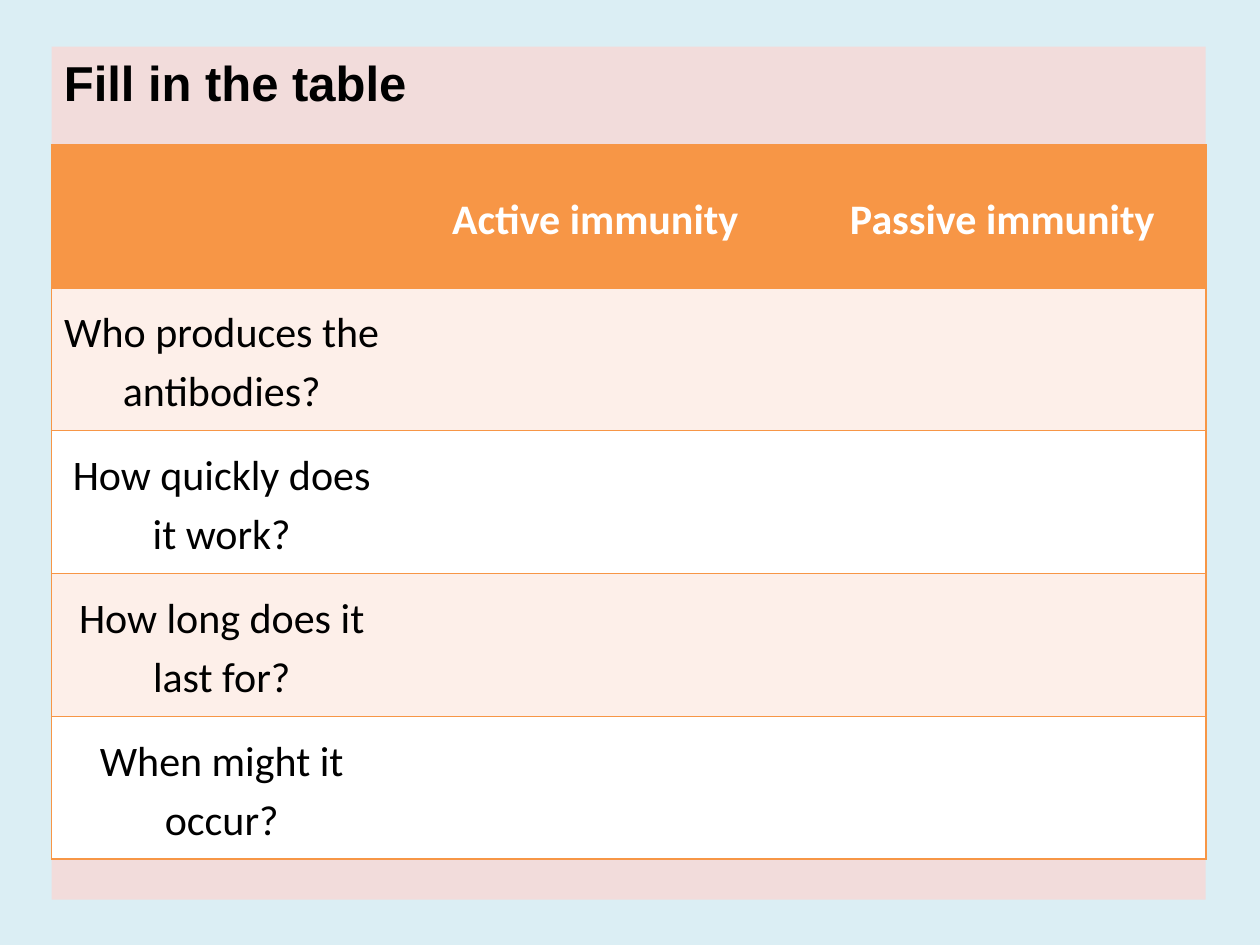
from lxml import etree
from pptx import Presentation
from pptx.dml.color import RGBColor
from pptx.enum.shapes import MSO_SHAPE
from pptx.enum.text import MSO_ANCHOR, MSO_AUTO_SIZE, PP_ALIGN
from pptx.oxml.ns import qn
from pptx.util import Inches, Pt

PALE_BLUE = RGBColor(0xDB, 0xEE, 0xF4)
PINK = RGBColor(0xF2, 0xDC, 0xDB)
ORANGE = RGBColor(0xF7, 0x96, 0x46)
PEACH = RGBColor(0xFD, 0xEF, 0xE9)
WHITE = RGBColor(0xFF, 0xFF, 0xFF)
BLACK = RGBColor(0x00, 0x00, 0x00)

HEADINGS = ["", "Active immunity", "Passive immunity"]
QUESTIONS = [
    "Who produces the antibodies?",
    "How quickly does it work?",
    "How long does it last for?",
    "When might it occur?",
]
COLUMN_WIDTHS = [2.7, 3.23, 3.23]


def add_run(paragraph, text, **font_format):
    run = paragraph.add_run()
    run.text = text
    color = font_format.pop("color")
    for name, value in font_format.items():
        setattr(run.font, name, value)
    run.font.color.rgb = color


def add_panel(slide, left, top, width, height):
    panel = slide.shapes.add_shape(MSO_SHAPE.RECTANGLE, left, top, width, height)
    panel.shadow.inherit = False
    panel.fill.solid()
    panel.fill.fore_color.rgb = PINK
    panel.line.fill.background()
    frame = panel.text_frame
    frame.word_wrap = True
    frame.auto_size = MSO_AUTO_SIZE.SHAPE_TO_FIT_TEXT
    frame.vertical_anchor = MSO_ANCHOR.TOP
    title = frame.paragraphs[0]
    title.alignment = PP_ALIGN.LEFT
    title.space_after = Pt(6)
    add_run(title, "Fill in the table", name="Arial", size=Pt(28), bold=True, color=BLACK)


def set_borders(cell, visible_sides):
    """Draw orange lines on the visible sides (of L, R, T, B) and none elsewhere."""
    properties = cell._tc.get_or_add_tcPr()
    for side in "LRTB":
        line = etree.SubElement(properties, qn(f"a:ln{side}"), w=str(Pt(1)))
        if side in visible_sides:
            fill = etree.SubElement(line, qn("a:solidFill"))
            etree.SubElement(fill, qn("a:srgbClr"), val=str(ORANGE))
        else:
            etree.SubElement(line, qn("a:noFill"))


def fill_cell(cell, text, is_heading):
    cell_format = {
        "vertical_anchor": MSO_ANCHOR.MIDDLE,
        "margin_left": Inches(0.07),
        "margin_right": Inches(0.07),
        "margin_top": 0,
        "margin_bottom": 0,
    }
    for name, value in cell_format.items():
        setattr(cell, name, value)
    paragraph = cell.text_frame.paragraphs[0]
    paragraph.alignment = PP_ALIGN.CENTER
    paragraph.line_spacing = 1.15
    paragraph.space_after = Pt(10 if is_heading else 0)
    add_run(paragraph, text, name="Calibri", size=Pt(24), bold=is_heading,
            color=WHITE if is_heading else BLACK)


def add_immunity_table(slide, left, top, width, height):
    rows = [HEADINGS] + [[question, "", ""] for question in QUESTIONS]
    table = slide.shapes.add_table(
        len(rows), len(HEADINGS), left, top, width, height).table
    for column, column_width in zip(table.columns, COLUMN_WIDTHS):
        column.width = Inches(column_width)

    for r, texts in enumerate(rows):
        row_fill = ORANGE if r == 0 else PEACH if r % 2 else WHITE
        for c, text in enumerate(texts):
            cell = table.cell(r, c)
            edge = {0: "L", len(texts) - 1: "R"}.get(c, "")
            set_borders(cell, "TB" + edge)
            cell.fill.solid()
            cell.fill.fore_color.rgb = row_fill
            if text:
                fill_cell(cell, text, is_heading=r == 0)


def main():
    presentation = Presentation()
    presentation.slide_width = Inches(10)
    presentation.slide_height = Inches(7.5)
    slide = presentation.slides.add_slide(presentation.slide_layouts[6])
    slide.background.fill.solid()
    slide.background.fill.fore_color.rgb = PALE_BLUE

    left, width = Inches(0.41), Inches(9.16)
    add_panel(slide, left, Inches(0.37), width, Inches(6.77))
    add_immunity_table(slide, left, Inches(1.15), width, Inches(5.67))
    presentation.save("out.pptx")


if __name__ == "__main__":
    main()
